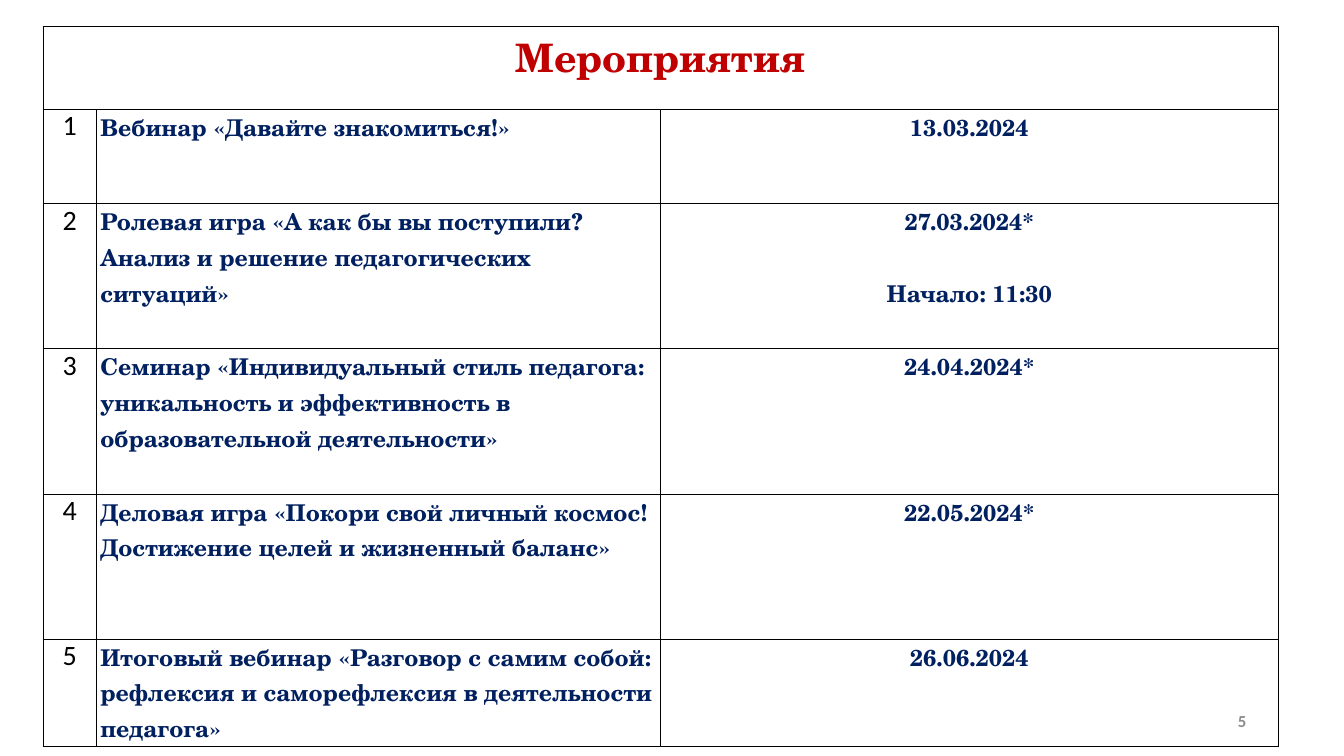
import pptx
import pptx.util
import pptx.dml.color
import pptx.enum.text
import pptx.oxml
import pptx.oxml.ns

Inches, Pt = pptx.util.Inches, pptx.util.Pt
ALIGN = pptx.enum.text.PP_ALIGN

# Content
TITLE = "Мероприятия"
EVENTS = [
    ("Вебинар «Давайте знакомиться!»", ["13.03.2024"]),
    ("Ролевая игра «А как бы вы поступили? Анализ и решение педагогических ситуаций»",
     ["27.03.2024*", "Начало: 11:30"]),
    ("Семинар «Индивидуальный стиль педагога: уникальность и эффективность в "
     "образовательной деятельности»", ["24.04.2024*"]),
    ("Деловая игра «Покори свой личный космос! Достижение целей и жизненный баланс»",
     ["22.05.2024*"]),
    ("Итоговый вебинар «Разговор с самим собой: рефлексия и саморефлексия в "
     "деятельности педагога»", ["26.06.2024"]),
]
PAGE_NUMBER = "5"

# Style
COLORS = {"title": "C00000", "event": "002060", "line": "000000",
          "number": "000000", "page": "8C8C8C"}
SERIF, SANS = "TeX Gyre Schola", "Calibri"
COL_WIDTHS = [1.07, 11.19, 12.25]
ROW_HEIGHTS = [1.64, 1.87, 2.88, 2.88, 2.88, 2.13]
LINE_GAP = 51  # one empty line between date and time, points


def write(tf, lines, size, font, color, align, bold=False):
    for i, line in enumerate(lines):
        p = tf.paragraphs[0] if i == 0 else tf.add_paragraph()
        p.alignment = align
        if i:
            p.space_before = Pt(LINE_GAP)
        r = p.add_run()
        r.text = line
        r.font.size = Pt(size)
        r.font.name = font
        r.font.bold = bold
        r.font.color.rgb = pptx.dml.color.RGBColor.from_string(COLORS[color])


def style_cell(cell):
    cell.margin_left = cell.margin_right = Inches(0.07)
    cell.margin_top = cell.margin_bottom = 0
    tc_pr = cell._tc.get_or_add_tcPr()
    for side in ("lnL", "lnR", "lnT", "lnB"):
        tc_pr.append(pptx.oxml.parse_xml(
            f'<a:{side} {pptx.oxml.ns.nsdecls("a")} w="12700"><a:solidFill>'
            f'<a:srgbClr val="{COLORS["line"]}"/></a:solidFill></a:{side}>'))
    cell.fill.background()


prs = pptx.Presentation()
prs.slide_width, prs.slide_height = Inches(26.67), Inches(15)
s = prs.slides.add_slide(prs.slide_layouts[6])

# Page number, seen through the unfilled table
tf = s.shapes.add_textbox(Inches(18.83), Inches(13.9), Inches(6), Inches(0.8)).text_frame
tf.word_wrap = True
tf.vertical_anchor = pptx.enum.text.MSO_ANCHOR.MIDDLE
write(tf, [PAGE_NUMBER], 24, SANS, "page", ALIGN.RIGHT, True)

# Table grid
table = s.shapes.add_table(
    len(ROW_HEIGHTS), len(COL_WIDTHS), Inches(0.85), Inches(0.53),
    Inches(sum(COL_WIDTHS)), Inches(sum(ROW_HEIGHTS))).table
table.first_row = table.horz_banding = False
for column, width in zip(table.columns, COL_WIDTHS):
    column.width = Inches(width)
for row, height in zip(table.rows, ROW_HEIGHTS):
    row.height = Inches(height)
for cell in table.iter_cells():
    style_cell(cell)

# Heading row
table.cell(0, 0).merge(table.cell(0, len(COL_WIDTHS) - 1))
write(table.cell(0, 0).text_frame, [TITLE], 56, SERIF, "title", ALIGN.CENTER, True)

# Event rows
for n, (event, dates) in enumerate(EVENTS, 1):
    number_tf, event_tf, date_tf = (table.cell(n, c).text_frame for c in range(3))
    write(number_tf, [str(n)], 40, SANS, "number", ALIGN.CENTER)
    write(event_tf, [event], 33, SERIF, "event", ALIGN.LEFT, True)
    write(date_tf, dates, 33, SERIF, "event", ALIGN.CENTER, True)

prs.save("out.pptx")
